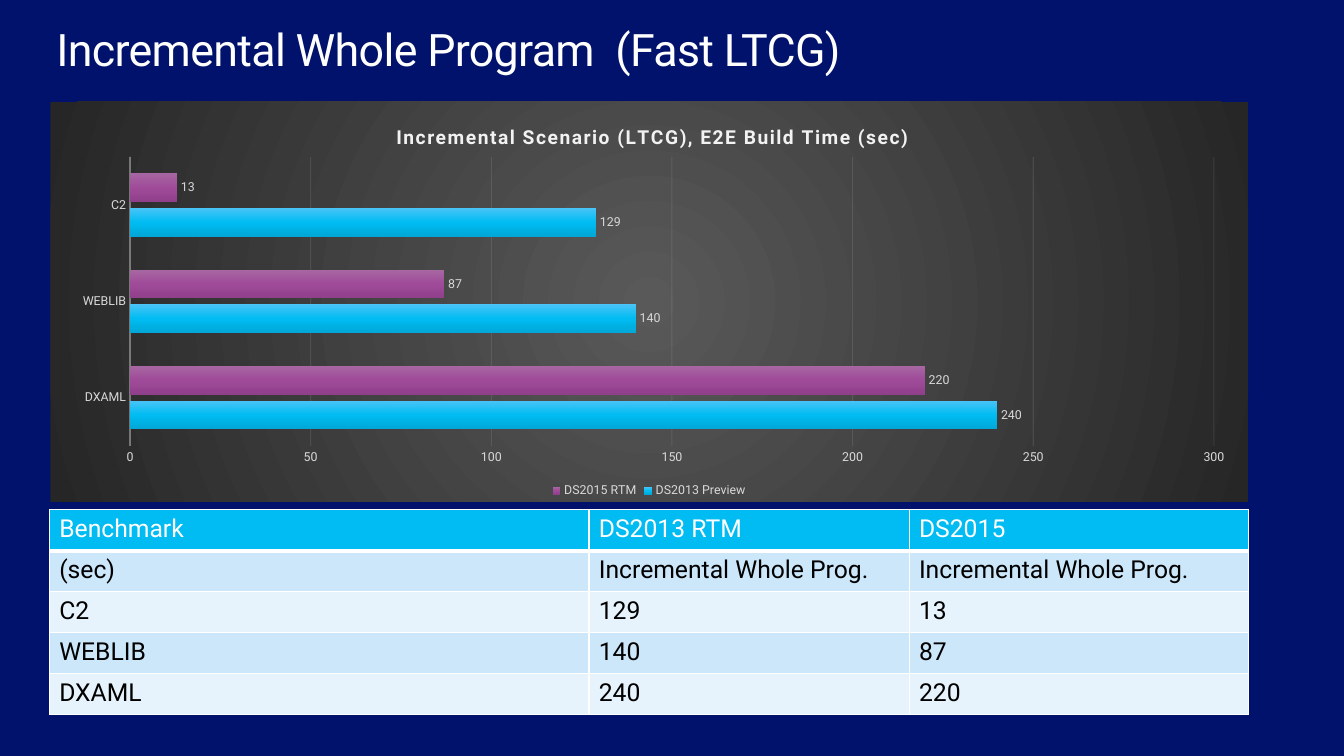
import pptx
import pptx.chart.data
import pptx.dml.color
import pptx.enum.chart
import pptx.enum.text
import pptx.oxml
import pptx.oxml.ns
import pptx.util
from pptx.util import Inches

FONT = "Roboto"
COLORS = {
    "background": "00126B",
    "white": "FFFFFF",
    "black": "000000",
    "header": "00BCF2",
    "band dark": "CCE7FA",
    "band light": "E7F3FC",
    "chart title": "F2F2F2",
    "chart text": "D9D9D9",
    "chart line": "F2F2F2",
    "chart center": "595959",
    "chart edge": "262626",
}
BENCHMARKS = [("C2", 129, 13), ("WEBLIB", 140, 87), ("DXAML", 240, 220)]
SERIES_GRADIENTS = {
    "DS2013 Preview": ["4BC4F7", "00BCF2", "00A7D7"],
    "DS2015 RTM": ["A767A2", "9F4B99", "903F8B"],
}
DOWNWARD = '<a:lin ang="5400000" scaled="0"/>'
FROM_CENTER = ('<a:path path="circle"><a:fillToRect l="50000" t="50000" '
               'r="50000" b="50000"/></a:path>')


def rgb(name):
    return pptx.dml.color.RGBColor.from_string(COLORS[name])


def xml(tag, body, attributes=""):
    namespaces = pptx.oxml.ns.nsdecls("a", "c")
    return pptx.oxml.parse_xml(f"<{tag} {namespaces} {attributes}>{body}</{tag}>")


def set_font(font, size, color, bold=False):
    font.name = FONT
    font.size = pptx.util.Pt(size)
    font.bold = bold
    font.color.rgb = rgb(color)


def gradient(hex_stops, direction):
    """Return a gradient fill with evenly spaced stops."""
    step = 100000 // (len(hex_stops) - 1)
    stops = "".join(f'<a:gs pos="{i * step}"><a:srgbClr val="{stop}"/></a:gs>'
                    for i, stop in enumerate(hex_stops))
    return xml("a:gradFill", f"<a:gsLst>{stops}</a:gsLst>{direction}", 'rotWithShape="1"')


def set_layout(element, index, **values):
    """Place a chart part by fractions of the chart's size."""
    for old in element.findall(pptx.oxml.ns.qn("c:layout")):
        element.remove(old)
    target = '<c:layoutTarget val="inner"/>' if "w" in values else ""
    modes = '<c:xMode val="edge"/><c:yMode val="edge"/>'
    sizes = "".join(f'<c:{key} val="{value}"/>' for key, value in values.items())
    element.insert(index, xml(
        "c:layout", f"<c:manualLayout>{target}{modes}{sizes}</c:manualLayout>"))


def set_line(line, width, opacity):
    line.width = pptx.util.Pt(width)
    line.color.rgb = rgb("chart line")
    color = line._get_or_add_ln().find(".//" + pptx.oxml.ns.qn("a:srgbClr"))
    color.append(xml("a:alpha", "", f'val="{opacity * 1000}"'))


def add_title(slide):
    title = slide.shapes.title
    title.left, title.top = Inches(0.47), Inches(0.13)
    title.width, title.height = Inches(10.7), Inches(0.69)
    frame = title.text_frame
    frame.word_wrap = True
    frame.auto_size = pptx.enum.text.MSO_AUTO_SIZE.NONE
    frame.vertical_anchor = pptx.enum.text.MSO_ANCHOR.BOTTOM
    paragraph = frame.paragraphs[0]
    paragraph.alignment = pptx.enum.text.PP_ALIGN.LEFT
    paragraph.line_spacing = 0.9
    # The wider space sets the bracketed name apart.
    for text, spacing in [("Incremental Whole Program", -50), (" ", 700), ("(Fast LTCG)", -50)]:
        run = paragraph.add_run()
        run.text = text
        run.font._element.set("spc", str(spacing))
    set_font(paragraph.font, 32.6, "white")


def style_axes(chart):
    for axis in (chart.category_axis, chart.value_axis):
        axis.major_tick_mark = pptx.enum.chart.XL_TICK_MARK.NONE
        axis.minor_tick_mark = pptx.enum.chart.XL_TICK_MARK.NONE
        set_font(axis.tick_labels.font, 9, "chart text")
    set_line(chart.category_axis.format.line, 1, 54)
    seconds = chart.value_axis
    seconds.minimum_scale, seconds.maximum_scale, seconds.major_unit = 0, 300, 50
    seconds.format.line.fill.background()
    set_line(seconds.major_gridlines.format.line, 0.75, 10)


def add_chart_title(chart):
    chart.has_title = True
    title = chart.chart_title
    paragraph = title.text_frame.paragraphs[0]
    run = paragraph.add_run()
    run.text = "Incremental Scenario (LTCG), E2E Build Time (sec)"
    set_font(paragraph.font, 14, "chart title", bold=True)
    set_font(run.font, 14, "chart title", bold=True)
    run.font._element.set("spc", "100")
    set_layout(title._element, 1, x=0.286, y=0.045)


def add_build_times_chart(slide):
    names, times_2013, times_2015 = zip(*reversed(BENCHMARKS))
    data = pptx.chart.data.CategoryChartData()
    data.categories = names
    for name, times in zip(SERIES_GRADIENTS, (times_2013, times_2015)):
        data.add_series(name, times)
    chart = slide.shapes.add_chart(
        pptx.enum.chart.XL_CHART_TYPE.BAR_CLUSTERED,
        Inches(0.51), Inches(1.03), Inches(12.12), Inches(4.05), data).chart
    set_font(chart.font, 10, "white")
    background = xml("c:spPr", "<a:ln><a:noFill/></a:ln>")
    background.insert(0, gradient([COLORS["chart center"], COLORS["chart edge"]], FROM_CENTER))
    chart_space = chart._chartSpace
    chart_space.find(pptx.oxml.ns.qn("c:chart")).addnext(background)

    add_chart_title(chart)
    style_axes(chart)
    chart.has_legend = True
    chart.legend.position = pptx.enum.chart.XL_LEGEND_POSITION.BOTTOM
    chart.legend.include_in_layout = False
    set_font(chart.legend.font, 9, "chart text")

    plot = chart.plots[0]
    plot.gap_width, plot.overlap = 115, -20
    plot.vary_by_categories = False
    for series in plot.series:
        series.invert_if_negative = False
        series._element.get_or_add_spPr().append(
            gradient(SERIES_GRADIENTS[series.name], DOWNWARD))
        labels = series.data_labels
        labels.show_value = True
        labels.position = pptx.enum.chart.XL_LABEL_POSITION.OUTSIDE_END
        set_font(labels.font, 9, "chart text")
    plot_area = chart_space.find(".//" + pptx.oxml.ns.qn("c:plotArea"))
    set_layout(plot_area, 0, x=0.0665, y=0.1375, w=0.905, h=0.7225)


def set_borders(cell, widths):
    """Draw white borders; widths maps a side (L, R, T, B) to points."""
    properties = cell._tc.get_or_add_tcPr()
    fill = f'<a:solidFill><a:srgbClr val="{COLORS["white"]}"/></a:solidFill>'
    for index, (side, width) in enumerate(widths.items()):
        properties.insert(index, xml(f"a:ln{side}", fill, f'w="{pptx.util.Pt(width)}"'))


def add_benchmark_table(slide):
    rows = [("Benchmark", "DS2013 RTM", "DS2015"),
            ("(sec)", "Incremental Whole Prog.", "Incremental Whole Prog."),
            *BENCHMARKS]
    table = slide.shapes.add_table(
        len(rows), 3, Inches(0.5), Inches(5.16), Inches(12.13), Inches(2.07)).table
    for column, width in zip(table.columns, (5.46, 3.24, 3.43)):
        column.width = Inches(width)
    for i, row in enumerate(rows):
        band = "header" if i == 0 else "band dark" if i % 2 else "band light"
        widths = {"L": 1, "R": 1, "T": 3 if i == 1 else 1, "B": 3 if i == 0 else 1}
        for j, value in enumerate(row):
            cell = table.cell(i, j)
            cell.text = str(value)
            set_font(cell.text_frame.paragraphs[0].font, 18, "black" if i else "white")
            cell.fill.solid()
            cell.fill.fore_color.rgb = rgb(band)
            set_borders(cell, widths)


def main():
    presentation = pptx.Presentation()
    presentation.slide_width = Inches(13.6)
    presentation.slide_height = Inches(7.65)
    slide = presentation.slides.add_slide(presentation.slide_layouts[5])
    slide.background.fill.solid()
    slide.background.fill.fore_color.rgb = rgb("background")
    add_title(slide)
    add_build_times_chart(slide)
    add_benchmark_table(slide)
    presentation.save("out.pptx")


if __name__ == "__main__":
    main()
